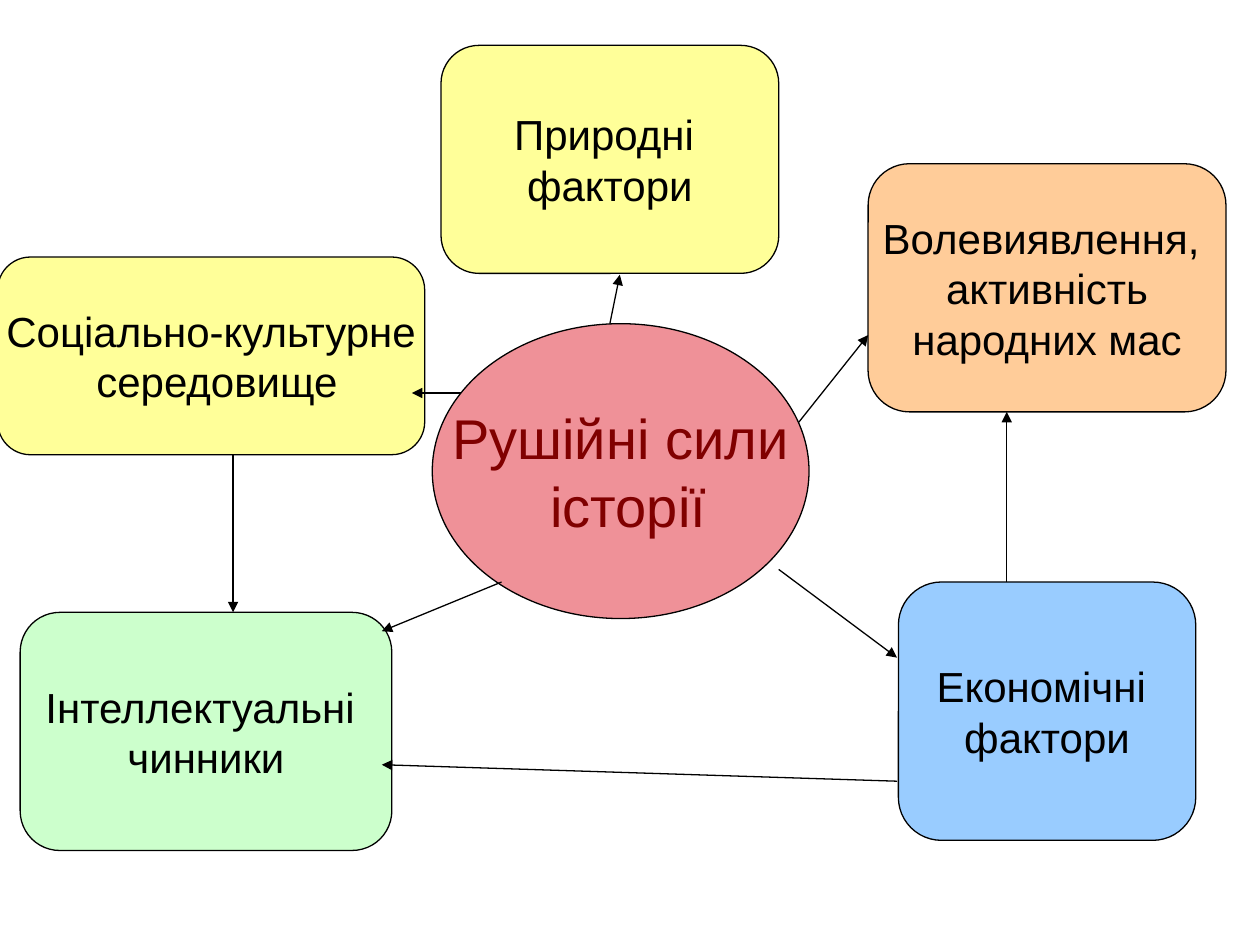
from lxml import etree
from pptx import Presentation, util as u
from pptx.dml.color import RGBColor
from pptx.enum import shapes, text
from pptx.oxml.ns import qn

Pt = u.Pt


def color(hex_value):
    return RGBColor.from_string(hex_value)


deck = Presentation()
deck.slide_width, deck.slide_height = Pt(720), Pt(540)
page = deck.slides.add_slide(deck.slide_layouts[6])

ELLIPSE = shapes.MSO_SHAPE.OVAL
ROUNDED = shapes.MSO_SHAPE.ROUNDED_RECTANGLE

# kind, (left, top, width, height), fill, font size, font colour, lines
factors = [
    (ELLIPSE, (247, 185, 215.3, 168.5), "EF9198", 32, "800000",
     ["Рушійні сили", " історії"]),
    (ROUNDED, (11.5, 349.9, 212.4, 136.1), "CCFFCC", 24, "000000",
     ["Інтеллектуальні ", "чинники"]),
    (ROUNDED, (496.1, 93.6, 204.5, 141.8), "FFCC99", 24, "000000",
     ["Волевиявлення, ", "активність", "народних мас"]),
    (ROUNDED, (513.4, 332.6, 169.9, 147.6), "99CCFF", 24, "000000",
     ["Економічні ", "фактори"]),
    (ROUNDED, (-1.4, 146.9, 244.1, 113), "FFFF99", 24, "000000",
     ["Соціально-культурне", " середовище"]),
    (ROUNDED, (252, 25.9, 193, 130.3), "FFFF99", 24, "000000",
     ["Природні ", "фактори"]),
]
for kind, place, fill, size, font_color, lines in factors:
    box = page.shapes.add_shape(kind, *map(Pt, place))
    box.shadow.inherit = False
    box.fill.solid()
    box.fill.fore_color.rgb = color(fill)
    box.line.color.rgb = color("000000")
    box.line.width = Pt(0.75)
    frame = box.text_frame
    frame.word_wrap = False
    frame.vertical_anchor = text.MSO_ANCHOR.MIDDLE
    for index, line in enumerate(lines):
        para = frame.add_paragraph() if index else frame.paragraphs[0]
        para.text = line
        para.alignment = text.PP_ALIGN.CENTER
        para.font.name = "Arial"
        para.font.size = Pt(size)
        para.font.color.rgb = color(font_color)

# start x, start y, end x, end y
arrows = [
    (286.6, 332.6, 218.2, 360.7),
    (348.5, 185, 354.2, 157),
    (456.5, 241.2, 496.1, 191.5),
    (445, 325.4, 512.6, 375.8),
    (263.5, 224.6, 235.4, 224.6),
    (133.2, 259.9, 133.2, 349.9),
    (575.3, 332.6, 575.3, 235.4),
    (512.6, 446.4, 218.2, 437),
]
for ends in arrows:
    arrow = page.shapes.add_connector(shapes.MSO_CONNECTOR.STRAIGHT, *map(Pt, ends))
    arrow.line.color.rgb = color("000000")
    arrow.line.width = Pt(0.75)
    properties = arrow.line._get_or_add_ln()
    etree.SubElement(properties, qn("a:tailEnd"), type="triangle")
    etree.SubElement(properties.getparent(), qn("a:effectLst"))

deck.save("out.pptx")
